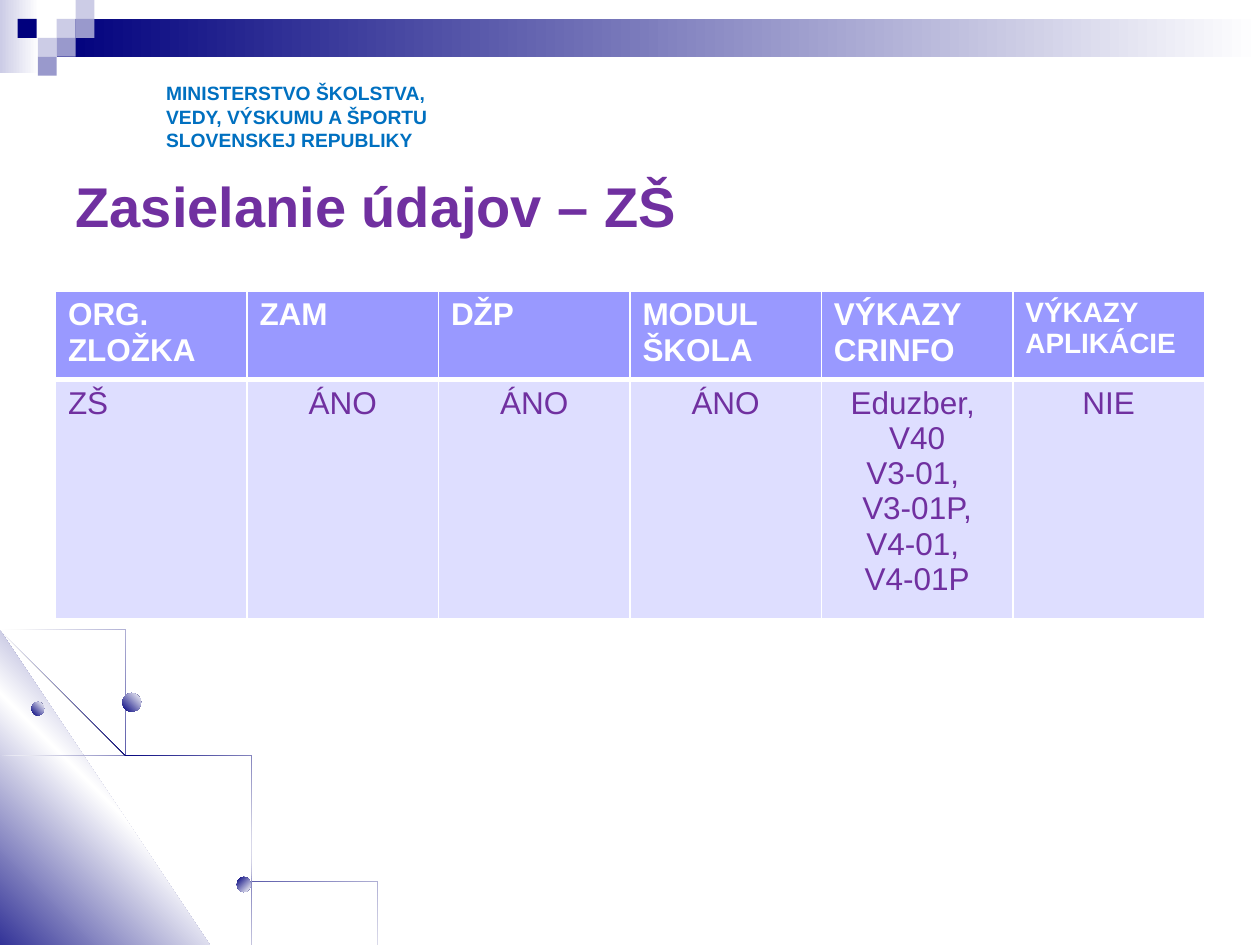
import copy

from lxml import etree
from pptx import Presentation
from pptx import util as u
from pptx.dml import color
from pptx.enum import shapes, text
from pptx.oxml import ns

NAVY, WHITE, LILAC, LAVENDER = "00007D", "FFFFFF", "CCCCE6", "9999CC"
PURPLE, BLUE = "7030A0", "0070C0"
FADE = [(0, NAVY), (1, WHITE)]
GLOW = [(0, WHITE), (0.5, NAVY), (1, WHITE)]
LEFT, CENTER = text.PP_ALIGN.LEFT, text.PP_ALIGN.CENTER


def rgb(value):
    return color.RGBColor.from_string(value)


def write(frame, lines, size=18, ink=PURPLE, bold=False, align=LEFT):
    """Fill a text frame with one paragraph per line."""
    for index, line in enumerate(lines):
        para = frame.add_paragraph() if index else frame.paragraphs[0]
        para.alignment = align
        span = para.add_run()
        span.text = line
        span.font.name = "Arial"
        span.font.size = u.Pt(size)
        span.font.bold = bold
        span.font.color.rgb = rgb(ink)


class SlideBuilder:
    """Holds the slide and the drawing style."""

    def __init__(self, slide):
        self.slide = slide

    def finish(self, shape, fill, angle=0):
        """Apply a plain or gradient fill; the angle runs clockwise."""
        shape.shadow.inherit = False
        shape.line.fill.background()
        if isinstance(fill, str):
            shape.fill.solid()
            shape.fill.fore_color.rgb = rgb(fill)
            return
        shape.fill.gradient()
        shape.fill.gradient_angle = (360 - angle) % 360
        stop_list = next(shape._element.iter(ns.qn("a:gsLst")))
        while len(stop_list) < len(fill):
            stop_list.append(copy.deepcopy(stop_list[0]))
        for stop, (position, value) in zip(shape.fill.gradient_stops, fill):
            stop.position = position
            stop.color.rgb = rgb(value)

    def preset(self, kind, left, top, width, height, fill, angle=0):
        box = self.slide.shapes.add_shape(
            kind, u.Inches(left), u.Inches(top), u.Inches(width), u.Inches(height))
        self.finish(box, fill, angle)

    def outline(self, points, fill, angle):
        builder = self.slide.shapes.build_freeform(*points[0], scale=u.Inches(1))
        builder.add_line_segments(points[1:], close=True)
        self.finish(builder.convert_to_shape(), fill, angle)

    def title(self, line, left, top, width, height):
        box = self.slide.shapes.title
        box.left, box.top = u.Inches(left), u.Inches(top)
        box.width, box.height = u.Inches(width), u.Inches(height)
        box.text_frame.auto_size = text.MSO_AUTO_SIZE.NONE
        box.text_frame.vertical_anchor = text.MSO_ANCHOR.TOP
        write(box.text_frame, [line], size=32, bold=True)

    def label(self, lines, left, top, width, height, **style):
        box = self.slide.shapes.add_textbox(
            u.Inches(left), u.Inches(top), u.Inches(width), u.Inches(height))
        box.text_frame.word_wrap = True
        write(box.text_frame, lines, **style)

    def borders(self, cell, bottom, top):
        properties = cell._tc.get_or_add_tcPr()
        sides = {"lnL": 1, "lnR": 1, "lnT": top, "lnB": bottom}
        for index, (side, points) in enumerate(sides.items()):
            line = etree.Element(ns.qn("a:" + side), w=str(u.Pt(points)))
            paint = etree.SubElement(line, ns.qn("a:solidFill"))
            etree.SubElement(paint, ns.qn("a:srgbClr"), val=WHITE)
            properties.insert(index, line)

    def table(self, header, body, left, top, column_width, row_heights):
        table = self.slide.shapes.add_table(
            2, len(header), u.Inches(left), u.Inches(top),
            u.Inches(column_width * len(header)), u.Inches(sum(row_heights))).table
        for column in table.columns:
            column.width = u.Inches(column_width)
        for row, height in zip(table.rows, row_heights):
            row.height = u.Inches(height)
        for index, (heading, lines) in enumerate(zip(header, body)):
            last = index == len(header) - 1
            head, value = table.cell(0, index), table.cell(1, index)
            for cell, fill in ((head, "9999FF"), (value, "DEDEFF")):
                cell.fill.solid()
                cell.fill.fore_color.rgb = rgb(fill)
            self.borders(head, bottom=3, top=1)
            self.borders(value, bottom=1, top=3)
            write(head.text_frame, heading, size=16 if last else 18, ink=WHITE, bold=True)
            write(value.text_frame, lines, align=CENTER if index else LEFT)


# Outer edge downwards, then inner edge back up
WIDE_ARC = [
    (0.4, 5.31), (0.2, 5.26), (0, 5.23), (0, 5.24), (0.2, 5.28), (0.4, 5.32),
    (0.68, 5.42), (0.95, 5.53), (1.22, 5.69), (1.47, 5.86), (1.7, 6.05),
    (1.91, 6.27), (2.1, 6.51), (2.28, 6.77), (2.38, 6.95), (2.47, 7.13),
    (2.54, 7.31), (2.61, 7.5), (2.62, 7.5), (2.56, 7.31), (2.48, 7.13),
    (2.39, 6.95), (2.29, 6.77), (2.12, 6.5), (1.92, 6.26), (1.7, 6.04),
    (1.48, 5.84), (1.23, 5.67), (0.96, 5.53), (0.69, 5.4)]
LOW_ARC = [
    (2.01, 7.24), (2.07, 7.37), (2.12, 7.5), (2.14, 7.5), (2.09, 7.36),
    (2.02, 7.23), (1.88, 6.97), (1.71, 6.71), (1.51, 6.46), (1.3, 6.24),
    (1.07, 6.05), (0.82, 5.88), (0.56, 5.73), (0.29, 5.61), (0, 5.51),
    (0, 5.53), (0.27, 5.62), (0.55, 5.74), (0.81, 5.9), (1.06, 6.06),
    (1.29, 6.26), (1.5, 6.48), (1.7, 6.72), (1.87, 6.98)]
MIDDLE_ARC = [
    (0, 5.27), (0, 5.29), (0.26, 5.38), (0.52, 5.51), (0.77, 5.65), (1, 5.83),
    (1.22, 6.02), (1.43, 6.23), (1.6, 6.46), (1.78, 6.71), (1.88, 6.9),
    (1.98, 7.1), (2.06, 7.3), (2.12, 7.49), (2.14, 7.49), (2.07, 7.29),
    (1.99, 7.09), (1.89, 6.89), (1.79, 6.7), (1.62, 6.44), (1.44, 6.22),
    (1.23, 6), (1.01, 5.81), (0.79, 5.64), (0.54, 5.5), (0.27, 5.37)]


def main():
    deck = Presentation()
    deck.slide_width, deck.slide_height = u.Inches(10), u.Inches(7.5)
    page = SlideBuilder(deck.slides.add_slide(deck.slide_layouts[5]))
    rectangle, oval = shapes.MSO_SHAPE.RECTANGLE, shapes.MSO_SHAPE.OVAL

    # Top band with its mosaic of squares
    page.preset(rectangle, 0, 0, 0.31, 0.58, [(0, LILAC), (1, WHITE)])
    page.preset(rectangle, 0.45, 0.15, 9.55, 0.3, FADE)
    side = 0.15
    for left, top, fill in (
            (0.45, 0.15, LILAC), (0.6, 0, LILAC), (0.6, 0.15, LAVENDER),
            (0.3, 0.3, LILAC), (0.14, 0.15, NAVY), (0.45, 0.3, LAVENDER),
            (0.3, 0.45, LAVENDER)):
        page.preset(rectangle, left, top, side, side, fill)

    # Corner globe with orbits
    page.outline(WIDE_ARC, GLOW, 45)
    page.outline([(2.27, 7.5), (0, 7.5), (0, 5.16)],
                 [(0, NAVY), (0.5, WHITE), (1, NAVY)], 315)
    page.outline(LOW_ARC, GLOW, 45)
    page.outline(MIDDLE_ARC, GLOW, 45)
    page.preset(oval, 0.25, 5.57, 0.1, 0.11, FADE, 315)
    page.preset(oval, 1.88, 6.96, 0.11, 0.12, FADE, 45)
    page.preset(oval, 0.97, 5.5, 0.15, 0.15, FADE, 315)

    # Ministry name and title
    page.label(["MINISTERSTVO ŠKOLSTVA,", "VEDY, VÝSKUMU A ŠPORTU",
                "SLOVENSKEJ REPUBLIKY"],
               1.22, 0.6, 2.44, 0.66, size=11, ink=BLUE, bold=True)
    page.title("Zasielanie údajov – ZŠ", 0.5, 1.31, 9, 1.02)

    # Table of data deliveries
    page.table(
        [["ORG. ZLOŽKA"], ["ZAM"], ["DŽP"], ["MODUL ŠKOLA"],
         ["VÝKAZY", "CRINFO"], ["VÝKAZY APLIKÁCIE"]],
        [["ZŠ"], ["ÁNO"], ["ÁNO"], ["ÁNO"],
         ["Eduzber, ", "V40", "V3-01, ", "V3-01P, V4-01, ", "V4-01P"], ["NIE"]],
        left=0.44, top=2.31, column_width=1.52, row_heights=(0.66, 1.78))

    deck.save("out.pptx")


if __name__ == "__main__":
    main()
